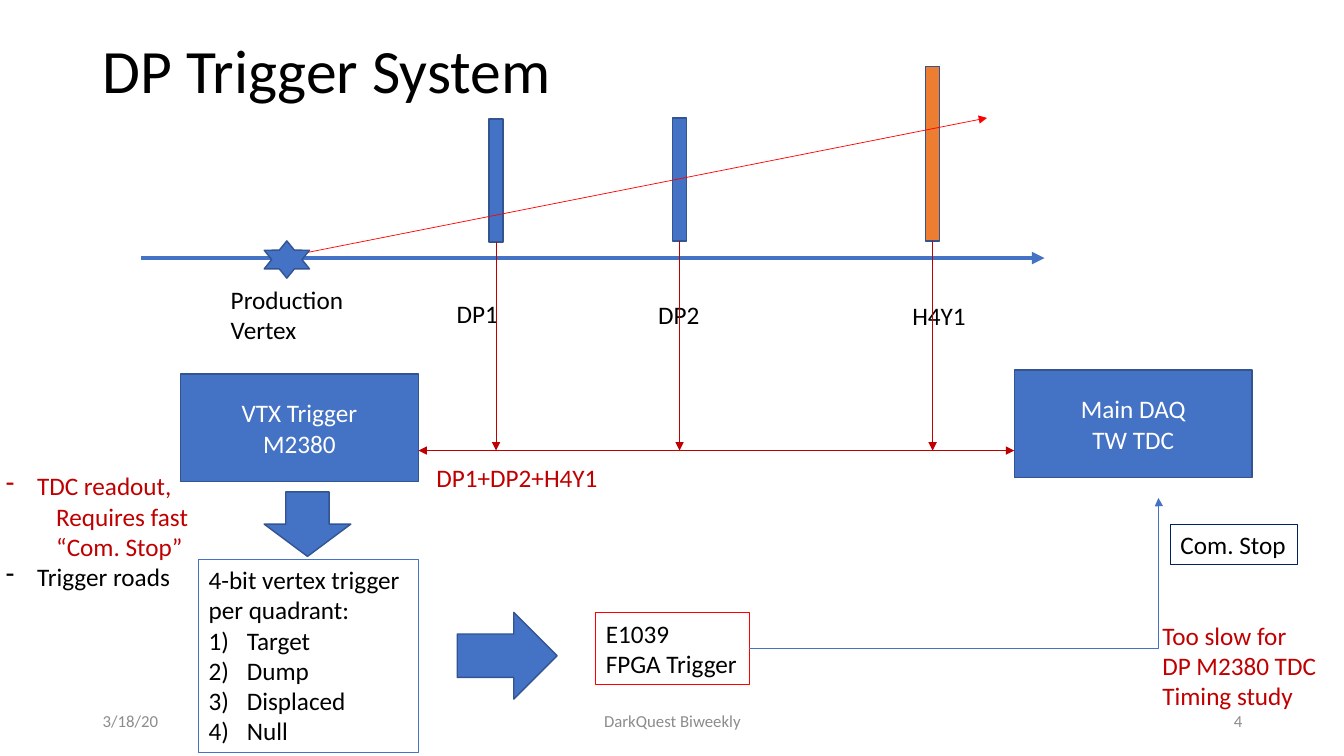
from lxml import etree
from pptx import Presentation
from pptx.dml.color import RGBColor
from pptx.enum.shapes import MSO_CONNECTOR as LINK, MSO_SHAPE as SHAPE
from pptx.enum.text import MSO_ANCHOR as ANCHOR, MSO_AUTO_SIZE as FIT, PP_ALIGN as ALIGN
from pptx.oxml.ns import qn
from pptx.util import Inches, Pt

BLUE, EDGE, ORANGE = "4472C4", "325491", "ED7D31"
BLACK, WHITE, GRAY = "000000", "FFFFFF", "8C8C8C"
RED, DARK_RED, NAVY = "FF0000", "C00000", "002060"

deck = Presentation()
deck.slide_width, deck.slide_height = Inches(13.33), Inches(7.5)
page = deck.slides.add_slide(deck.slide_layouts[5])


def write(box, lines, color=BLACK, size=18, align=ALIGN.LEFT, anchor=ANCHOR.TOP, wrap=False):
    """Fill a shape's text frame with one paragraph per line."""
    frame = box.text_frame
    frame.word_wrap = wrap
    frame.auto_size = FIT.NONE
    frame.vertical_anchor = anchor
    for index, line in enumerate(lines):
        para = frame.paragraphs[0] if index == 0 else frame.add_paragraph()
        para.alignment = align
        span = para.add_run()
        span.text = line
        span.font.name = "Calibri"
        span.font.size = Pt(size)
        span.font.color.rgb = RGBColor.from_string(color)
    return frame.paragraphs


def add_box(kind, place, fill=BLUE, edge=EDGE, weight=1):
    box = page.shapes.add_shape(kind, *map(Inches, place))
    box.shadow.inherit = False
    if fill:
        box.fill.solid()
        box.fill.fore_color.rgb = RGBColor.from_string(fill)
    else:
        box.fill.background()
    box.line.color.rgb = RGBColor.from_string(edge)
    box.line.width = Pt(weight)
    return box


# Title
title = page.shapes.title
title.left, title.top, title.width, title.height = map(Inches, (0.92, 0, 11.5, 1.45))
write(title, ["DP Trigger System"], size=44, anchor=ANCHOR.MIDDLE, wrap=True)[0].line_spacing = 0.9

# Detectors
detectors = [
    add_box(SHAPE.RECTANGLE, place, fill)
    for place, fill in [
        ((4.85, 1.18, 0.14, 1.22), BLUE),
        ((6.67, 1.17, 0.14, 1.22), BLUE),
        ((9.18, 0.66, 0.14, 1.73), ORANGE),
    ]
]

# Processing blocks and outlined notes
for left, top, lines in [
    (1.79, 3.71, ["VTX Trigger", "M2380"]),
    (10.06, 3.67, ["Main DAQ", "TW TDC"]),
]:
    block = add_box(SHAPE.RECTANGLE, (left, top, 2.36, 1.07))
    write(block, lines, WHITE, align=ALIGN.CENTER, anchor=ANCHOR.MIDDLE, wrap=True)

vertex_trigger = add_box(SHAPE.RECTANGLE, (1.97, 5.55, 2.18, 1.92), None, BLUE, 0.75)
vertex_lines = write(vertex_trigger, ["4-bit vertex trigger", "per quadrant:",
                                      "Target", "Dump", "Displaced", "Null"])
fpga_trigger = add_box(SHAPE.RECTANGLE, (5.91, 6.08, 1.52, 0.71), None, RED, 0.75)
write(fpga_trigger, ["E1039", "FPGA Trigger"])
com_stop = add_box(SHAPE.RECTANGLE, (11.61, 5.2, 1.26, 0.4), None, NAVY, 0.75)
write(com_stop, ["Com. Stop"])

# Labels and footer
for place, lines, color in [
    ((4.43, 2.91, 0.62, 0.4), ["DP1"], BLACK),
    ((6.43, 2.92, 0.62, 0.4), ["DP2"], BLACK),
    ((8.95, 2.93, 0.74, 0.4), ["H4Y1"], BLACK),
    ((2.19, 2.77, 1.39, 0.71), ["Production", "Vertex"], BLACK),
    ((4.23, 4.54, 1.82, 0.4), ["DP1+DP2+H4Y1"], DARK_RED),
    ((11.43, 6.1, 1.67, 1.01), ["Too slow for", "DP M2380 TDC", "Timing study"], DARK_RED),
]:
    write(page.shapes.add_textbox(*map(Inches, place)), lines, color)

for left, width, text, align in [
    (0.92, 3, "3/18/20", ALIGN.LEFT),
    (4.42, 4.5, "DarkQuest Biweekly", ALIGN.CENTER),
    (9.42, 3, "4", ALIGN.RIGHT),
]:
    footer = page.shapes.add_textbox(Inches(left), Inches(6.95), Inches(width), Inches(0.4))
    write(footer, [text], GRAY, 12, align, ANCHOR.MIDDLE, True)

readout = page.shapes.add_textbox(*map(Inches, (-0.04, 4.62, 2.26, 1.31)))
readout_lines = write(readout, ["TDC readout,", "Requires fast “Com. Stop”", "Trigger roads"],
                      DARK_RED, wrap=True)
readout_lines[2].runs[0].font.color.rgb = RGBColor.from_string(BLACK)
readout_lines[1].level = 1
readout_lines[1]._p.get_or_add_pPr().set("marL", str(Inches(0.5)))

# Bullets and numbering
bulleted = [(para, 0.38, "a:buAutoNum", "type", "arabicParenR") for para in vertex_lines[2:]]
bulleted += [(para, 0.31, "a:buChar", "char", "-") for para in readout_lines[::2]]
for para, indent, tag, key, value in bulleted:
    props = para._p.get_or_add_pPr()
    props.set("marL", str(Inches(indent)))
    props.set("indent", str(-Inches(indent)))
    etree.SubElement(props, qn(tag)).set(key, value)

# Lines: kind, start, end, colour, weight, arrow ends, shape joined at the start, its side
links = [
    (LINK.STRAIGHT, (1.4, 2.56), (10.36, 2.56), BLUE, 3, ["tailEnd"], None, None),
    (LINK.STRAIGHT, (2.77, 2.56), (9.79, 1.17), RED, 0.5, ["tailEnd"], None, None),
    (LINK.STRAIGHT, (4.15, 4.47), (10.06, 4.47), DARK_RED, 0.5, ["headEnd", "tailEnd"], None, None),
    (LINK.ELBOW, (7.43, 6.43), (11.49, 4.94), BLUE, 0.5, ["tailEnd"], fpga_trigger, 3),
]
for detector, center in zip(detectors, (4.92, 6.74, 9.25)):
    links.append((LINK.STRAIGHT, (center, 2.4), (center, 4.47), DARK_RED, 0.5,
                  ["tailEnd"], detector, 2))
for kind, start, end, color, weight, arrow_ends, source, side in links:
    link = page.shapes.add_connector(kind, *map(Inches, start + end))
    if source is not None:
        link.begin_connect(source, side)
    link.line.color.rgb = RGBColor.from_string(color)
    link.line.width = Pt(weight)
    for arrow_end in arrow_ends:
        etree.SubElement(link.line._get_or_add_ln(), qn("a:" + arrow_end)).set("type", "triangle")
    props = link._element.spPr
    etree.SubElement(props, qn("a:effectLst"))
    if kind == LINK.ELBOW:
        guide = etree.SubElement(props.find(qn("a:prstGeom")).find(qn("a:avLst")), qn("a:gd"))
        guide.set("name", "adj1")
        guide.set("fmla", "val 100100")

# Vertex star and block arrows
add_box(SHAPE.STAR_6_POINT, (2.62, 2.39, 0.45, 0.37))
add_box(SHAPE.DOWN_ARROW, (2.62, 4.88, 0.86, 0.64))
add_box(SHAPE.DOWN_ARROW, (4.6, 6.01, 0.86, 0.99)).rotation = 270

deck.save("out.pptx")
